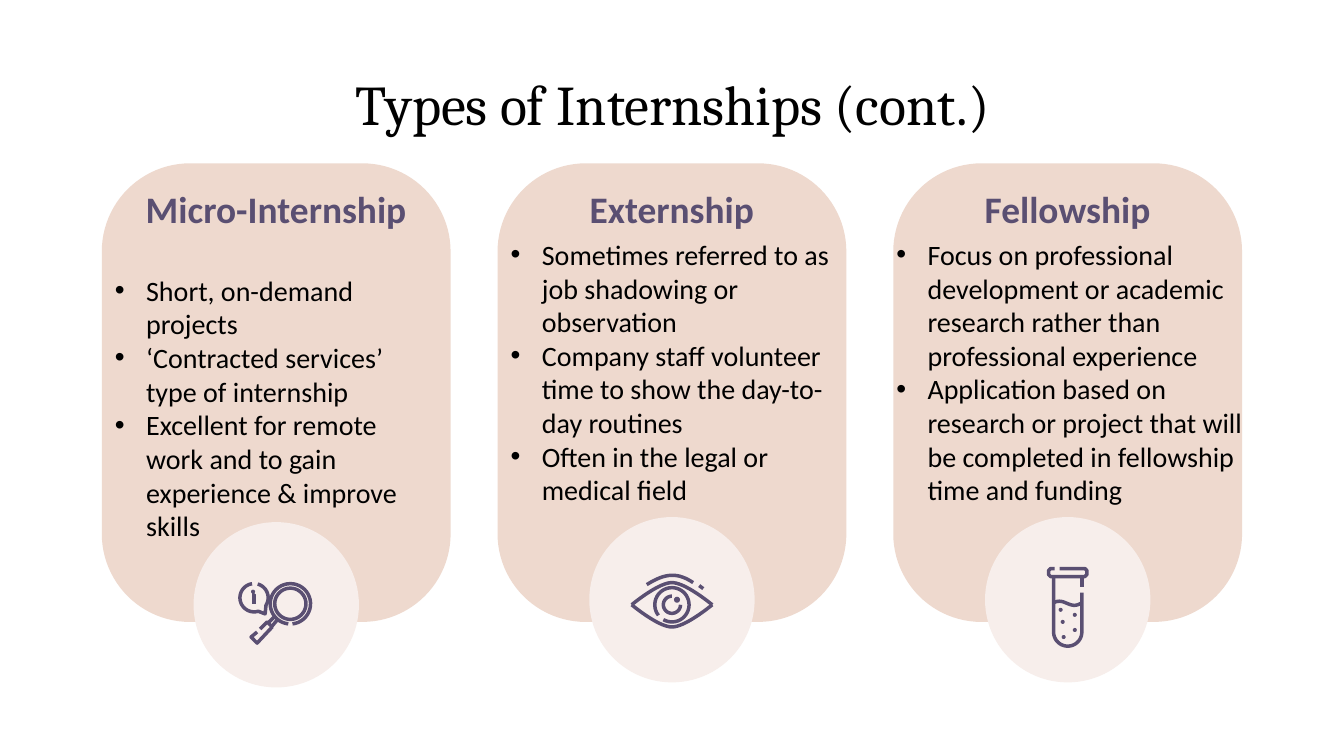
from dataclasses import dataclass
from math import cos, radians, sin

from lxml import etree
from pptx import Presentation
from pptx.dml.color import RGBColor as RGB
from pptx.enum.shapes import MSO_SHAPE as SHAPE
from pptx.enum.text import MSO_ANCHOR as ANCHOR, PP_ALIGN as ALIGN
from pptx.oxml.ns import qn
from pptx.util import Inches, Pt


@dataclass(frozen=True)
class Theme:
    text = RGB.from_string("000000")
    card = RGB.from_string("EED9CE")
    badge = RGB.from_string("F7EEEB")
    accent = RGB.from_string("5A4F72")
    title_font = "Cambria"
    body_font = "Calibri"
    title_size = 40
    heading_size = 26.7
    body_size = 20
    stroke = 2.5


@dataclass(frozen=True)
class Card:
    heading: str
    points: tuple
    icon: tuple
    body_shift: float = 0
    body_width: float = 3.46
    body_height: float = 2.88
    badge_top: float = 3.51


def arc(x, y, r, start, end, steps=40):
    angles = [radians(start + (end - start) * i / steps) for i in range(steps + 1)]
    return [(x + r * cos(a), y + r * sin(a)) for a in angles]


def bezier(a, b, c, d, steps=16):
    def at(t):
        weights = ((1 - t) ** 3, 3 * t * (1 - t) ** 2, 3 * t * t * (1 - t), t ** 3)
        return tuple(sum(w * p[k] for w, p in zip(weights, (a, b, c, d))) for k in (0, 1))
    return [at(i / steps) for i in range(steps + 1)]


def magnifier():
    strokes = [
        arc(0.14, -0.01, 0.2, 96, 444),
        arc(0.14, -0.01, 0.155, 0, 360),
        [(-0.02, 0.12), (-0.08, 0.18)],
        [(0.01, 0.15), (-0.04, 0.21)],
        [(-0.16, 0.24), (-0.09, 0.17), (-0.04, 0.22),
         (-0.19, 0.38), (-0.25, 0.32), (-0.19, 0.27)],
        arc(-0.22, -0.07, 0.14, -75, 32) + [(-0.11, 0.09)] + arc(-0.22, -0.07, 0.14, 73, 262),
        [(-0.24, -0.1), (-0.22, -0.1), (-0.22, -0.02)],
        [(-0.24, -0.02), (-0.2, -0.02)],
    ]
    return strokes, [(-0.23, -0.13, 0.02)]


def eye():
    lid = bezier((-0.4, 0), (-0.3, -0.08), (-0.11, -0.22), (0, -0.22))
    strokes = [[(x * i, 0.05 + y * j) for x, y in lid] for i in (1, -1) for j in (1, -1)]
    strokes += [
        bezier((-0.25, -0.15), (-0.06, -0.27), (0.06, -0.27), (0.21, -0.17)),
        [(0.27, -0.14), (0.31, -0.11)],
        arc(0, 0.05, 0.17, 142, 480),
        arc(0, 0.05, 0.085, 0, 270),
    ]
    return strokes, [(0.05, 0, 0.03)]


def test_tube():
    strokes = [
        [(-0.08, -0.31), (0.17, -0.31), (0.19, -0.29), (0.19, -0.25), (0.17, -0.23),
         (-0.17, -0.23), (-0.19, -0.25), (-0.19, -0.29), (-0.17, -0.31), (-0.13, -0.31)],
        [(-0.14, -0.23)] + arc(0, 0.32, 0.14, 180, 0) + [(0.14, -0.07)],
        [(0.14, -0.23), (0.14, -0.13)],
        bezier((-0.14, 0.03), (-0.03, -0.03), (0.02, 0.11), (0.14, 0.03)),
    ]
    bubbles = [(-0.07, 0.1), (0.07, 0.15), (-0.04, 0.37), (0.07, 0.3), (-0.05, 0.22)]
    return strokes, [(x, y, 0.02) for x, y in bubbles]


def add_shape(s, kind, box, color):
    sp = s.shapes.add_shape(kind, *map(Inches, box))
    sp.shadow.inherit = False
    sp.fill.solid()
    sp.fill.fore_color.rgb = color
    sp.line.fill.background()
    return sp


def add_stroke(s, points, theme):
    start, *rest = [(Inches(x), Inches(y)) for x, y in points]
    builder = s.shapes.build_freeform(*start)
    builder.add_line_segments(rest, close=False)
    sp = builder.convert_to_shape()
    sp.shadow.inherit = False
    sp.fill.background()
    sp.line.color.rgb = theme.accent
    sp.line.width = Pt(theme.stroke)


def add_icon(s, x, y, icon, theme):
    strokes, dots = icon
    for points in strokes:
        add_stroke(s, [(x + dx, y + dy) for dx, dy in points], theme)
    for dx, dy, r in dots:
        add_shape(s, SHAPE.OVAL, (x + dx - r, y + dy - r, 2 * r, 2 * r), theme.accent)


def add_bullet(p):
    pPr = p._p.get_or_add_pPr()
    pPr.set("marL", str(Inches(0.31)))
    pPr.set("indent", str(-Inches(0.31)))
    etree.SubElement(pPr, qn("a:buFont")).set("typeface", "Arial")
    etree.SubElement(pPr, qn("a:buChar")).set("char", "•")


def add_text(s, box, lines, font, size, color, bold=False, bullets=False):
    tf = s.shapes.add_textbox(*map(Inches, box)).text_frame
    tf.word_wrap = True
    tf.vertical_anchor = ANCHOR.MIDDLE
    tf.margin_left = tf.margin_right = tf.margin_top = tf.margin_bottom = Inches(0.13)
    tf.text = "\n".join(lines)
    for p in tf.paragraphs:
        if bullets:
            add_bullet(p)
        else:
            p.alignment = ALIGN.CENTER
        for r in p.runs:
            r.font.name = font
            r.font.size = Pt(size)
            r.font.color.rgb = color
            r.font.bold = bold


def add_card(s, left, top, width, height, card, theme):
    panel = add_shape(s, SHAPE.ROUNDED_RECTANGLE, (left, top, width, height), theme.card)
    panel.adjustments[0] = 0.253
    size = 1.64
    badge_left, badge_top = left + (width - size) / 2, top + card.badge_top
    add_shape(s, SHAPE.OVAL, (badge_left, badge_top, size, size), theme.badge)
    add_text(s, (left + 0.26, top + 0.21, 2.94, 0.48), [card.heading],
             theme.body_font, theme.heading_size, theme.accent, bold=True)
    body = (left + card.body_shift, top + 0.63, card.body_width, card.body_height)
    add_text(s, body, card.points, theme.body_font, theme.body_size, theme.text, bullets=True)
    add_icon(s, badge_left + size / 2, badge_top + size / 2, card.icon, theme)


def add_cards_slide(prs, title, cards, theme):
    s = prs.slides.add_slide(prs.slide_layouts[6])
    add_text(s, (0.67, 0.6, 12, 0.84), [title], theme.title_font, theme.title_size, theme.text)
    for i, card in enumerate(cards):
        add_card(s, 1.01 + 3.925 * i, 1.62, 3.46, 4.55, card, theme)


def main():
    prs = Presentation()
    prs.slide_width, prs.slide_height = Inches(13.33), Inches(7.5)
    cards = [
        Card("Micro-Internship",
             ("Short, on-demand projects",
              "‘Contracted services’ type of internship",
              "Excellent for remote work and to gain experience & improve skills"),
             magnifier(), body_height=3.59, badge_top=3.56),
        Card("Externship",
             ("Sometimes referred to as job shadowing or observation",
              "Company staff volunteer time to show the day-to-day routines",
              "Often in the legal or medical field"),
             eye()),
        Card("Fellowship",
             ("Focus on professional development or academic research "
              "rather than professional experience",
              "Application based on research or project that will be completed "
              "in fellowship time and funding"),
             test_tube(), body_shift=-0.1, body_width=3.91),
    ]
    add_cards_slide(prs, "Types of Internships (cont.)", cards, Theme())
    prs.save("out.pptx")


if __name__ == "__main__":
    main()
